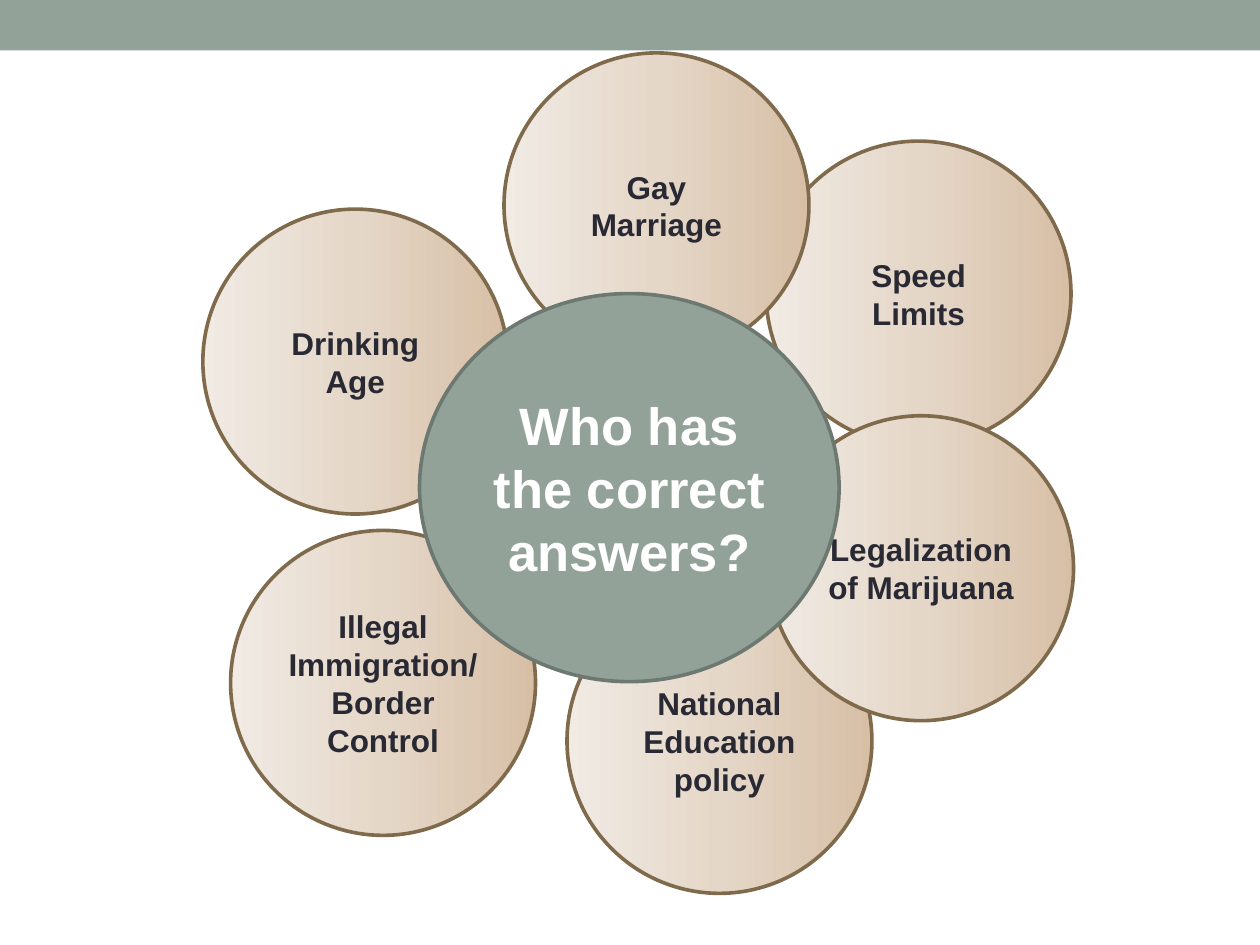
import copy

import pptx
import pptx.util
import pptx.dml.color
import pptx.enum.shapes
import pptx.enum.text
from pptx.util import Inches

RGB = pptx.dml.color.RGBColor
SHAPE = pptx.enum.shapes.MSO_SHAPE
SAGE = RGB(0x93, 0xA2, 0x99)
MOSS = RGB(0x6D, 0x78, 0x71)
BROWN = RGB(0x80, 0x6A, 0x4C)
INK = RGB(0x29, 0x29, 0x34)
WHITE = RGB(0xFF, 0xFF, 0xFF)
TANS = (RGB(0xD7, 0xBF, 0xA6), RGB(0xE5, 0xD7, 0xC8), RGB(0xF1, 0xEB, 0xE4))

PETAL = 2.42
TOPICS = (
    ("Speed Limits", 6.08, 1.12),
    ("National Education policy", 4.5, 4.67),
    ("Illegal Immigration/ Border Control", 1.83, 4.21),
    ("Drinking Age", 1.61, 1.66),
    ("Gay Marriage", 4, 0.42),
    ("Legalization of Marijuana", 6.1, 3.3),
)


def put_text(shape, text, size=18, color=INK, font="Arial", bold=True):
    frame = shape.text_frame
    frame.word_wrap = True
    frame.vertical_anchor = pptx.enum.text.MSO_ANCHOR.MIDDLE
    para = frame.paragraphs[0]
    para.alignment = pptx.enum.text.PP_ALIGN.CENTER
    run = para.add_run()
    run.text = text
    run.font.name = font
    run.font.size = pptx.util.Pt(size)
    run.font.bold = bold
    run.font.color.rgb = color


def add_form(slide, kind, box, edge=None):
    """Add a shape without shadow; without an edge colour it has no line."""
    shape = slide.shapes.add_shape(kind, *map(Inches, box))
    shape.shadow.inherit = False
    if edge is None:
        shape.line.fill.background()
    else:
        shape.line.color.rgb = edge
        shape.line.width = pptx.util.Pt(2.08)
    return shape


def fill_flat(shape, color):
    shape.fill.solid()
    shape.fill.fore_color.rgb = color


def fill_fade(shape, colors):
    """Fill with evenly spaced colours, running from right to left."""
    fill = shape.fill
    fill.gradient()
    fill.gradient_angle = 180
    stops = shape.element.xpath(".//a:gsLst")[0]
    while len(stops) < len(colors):
        stops.append(copy.deepcopy(stops[0]))
    for i, (stop, color) in enumerate(zip(fill.gradient_stops, colors)):
        stop.position = i / (len(colors) - 1)
        stop.color.rgb = color


def add_petal(slide, text, left, top):
    petal = add_form(slide, SHAPE.OVAL, (left, top, PETAL, PETAL), BROWN)
    fill_fade(petal, TANS)
    put_text(petal, text)


def main():
    deck = pptx.Presentation()
    deck.slide_width = Inches(10)
    deck.slide_height = Inches(7.5)
    slide = deck.slides.add_slide(deck.slide_layouts[6])

    band = add_form(slide, SHAPE.RECTANGLE, (0, 0, 10, 0.4))
    fill_flat(band, SAGE)
    for topic in TOPICS:
        add_petal(slide, *topic)
    core = add_form(slide, SHAPE.OVAL, (3.33, 2.33, 3.33, 3.08), MOSS)
    fill_flat(core, SAGE)
    put_text(core, "Who has the correct answers?", size=30, color=WHITE)

    deck.save("out.pptx")


if __name__ == "__main__":
    main()
